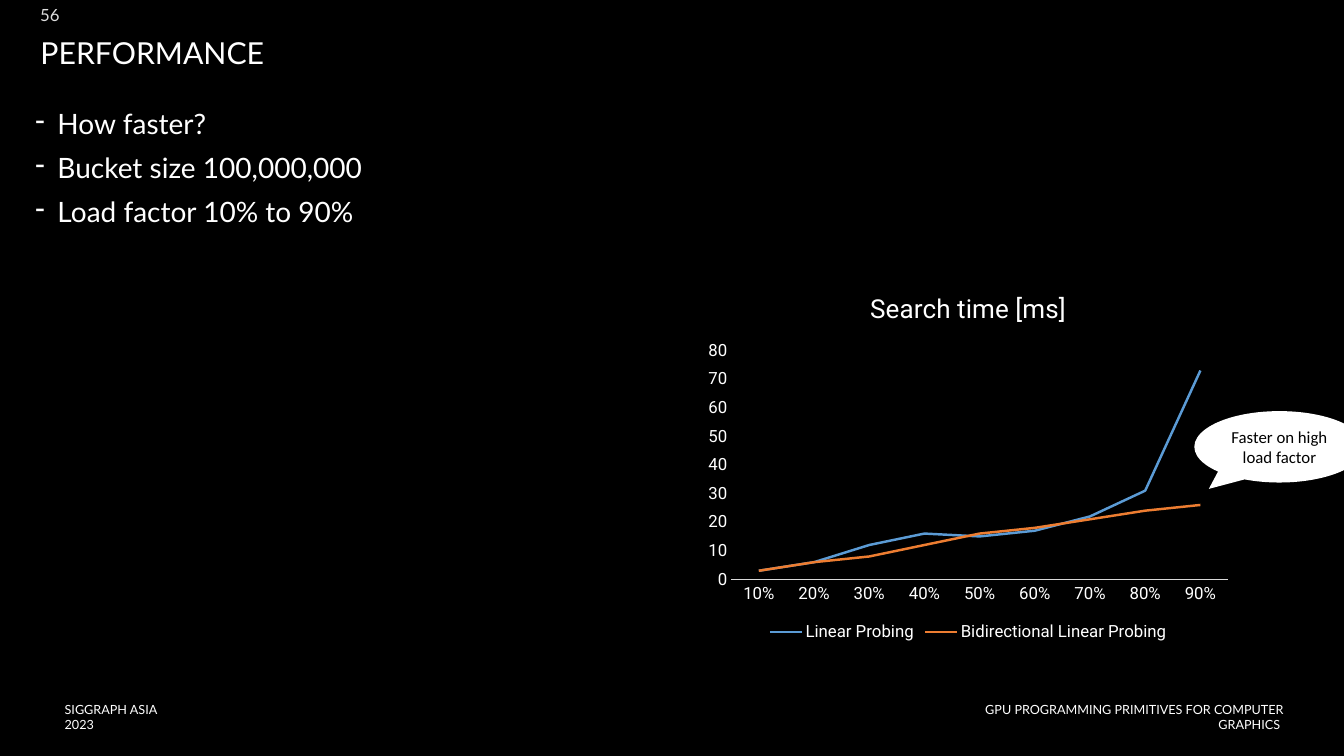
from lxml import etree
from pptx import Presentation
from pptx.chart import data
from pptx.dml import color
from pptx.enum import chart as charts, shapes, text
from pptx.oxml import ns, parse_xml
from pptx.util import Cm, Pt

BLANK_LAYOUT = 6
WHITE, BLACK = "FFFFFF", "000000"
SEARCH_TIMES = {
    "Linear Probing": ("5B9BD5", (3, 6, 12, 16, 15, 17, 22, 31, 73)),
    "Bidirectional Linear Probing": ("ED7D31", (3, 6, 8, 12, 16, 18, 21, 24, 26)),
}


def rgb(value):
    return color.RGBColor.from_string(value)


def paint(fill, value):
    fill.solid()
    fill.fore_color.rgb = rgb(value)


def style_font(font, size, value=WHITE, name="Lato"):
    font.name = name
    font.size = Pt(size)
    font.color.rgb = rgb(value)


def set_text(shape, words, size, value=WHITE, name="Lato", inset=0.13,
             align=text.PP_ALIGN.LEFT, anchor=text.MSO_ANCHOR.MIDDLE):
    frame = shape.text_frame
    frame.word_wrap = True
    frame.vertical_anchor = anchor
    frame.margin_left = frame.margin_right = Cm(inset)
    frame.margin_top = frame.margin_bottom = Cm(inset)
    frame.text = words
    for para in frame.paragraphs:
        para.alignment = align
        for span in para.runs:
            style_font(span.font, size, value, name)
    return frame


def add_text(page, bounds, words, size, **options):
    box = page.shapes.add_textbox(*map(Cm, bounds))
    return set_text(box, words, size, **options)


def add_bullets(page, bounds, lines):
    frame = add_text(page, bounds, "\n".join(lines), 20, anchor=text.MSO_ANCHOR.TOP)
    for index, para in enumerate(frame.paragraphs):
        properties = para._p.get_or_add_pPr()
        properties.set("marL", str(Cm(0.56)))
        properties.set("indent", str(-Cm(0.56)))
        etree.SubElement(properties, ns.qn("a:buChar"), char="-")
        para.line_spacing = 0.9
        if index:
            para.space_before = Pt(10)


def area_fill(value):
    return parse_xml(
        f'<c:spPr {ns.nsdecls("c", "a")}><a:solidFill><a:srgbClr val="{value}"/>'
        "</a:solidFill><a:ln><a:noFill/></a:ln></c:spPr>")


def style_axis(axis, number_format):
    axis.has_major_gridlines = False
    axis.major_tick_mark = axis.minor_tick_mark = charts.XL_TICK_MARK.NONE
    axis.tick_labels.number_format = number_format
    axis.tick_labels.number_format_is_linked = False
    style_font(axis.tick_labels.font, 12, name="Roboto")


def add_search_chart(page, bounds):
    table = data.CategoryChartData()
    table.categories = [step / 10 for step in range(1, 10)]
    table.categories.number_format = "0%"
    for name, (_, values) in SEARCH_TIMES.items():
        table.add_series(name, values)
    chart = page.shapes.add_chart(
        charts.XL_CHART_TYPE.LINE, *map(Cm, bounds), table).chart
    style_font(chart.font, 10, name="Roboto")

    chart.has_title = True
    title = chart.chart_title.text_frame
    title.text = "Search time [ms]"
    style_font(title.paragraphs[0].runs[0].font, 18.6, name="Roboto")
    title.paragraphs[0].runs[0].font.bold = False
    chart.chart_title.include_in_layout = False

    chart.has_legend = True
    chart.legend.position = charts.XL_LEGEND_POSITION.BOTTOM
    chart.legend.include_in_layout = False
    style_font(chart.legend.font, 12, name="Roboto")

    style_axis(chart.category_axis, "0%")
    chart.category_axis.format.line.color.rgb = rgb("D9D9D9")
    chart.category_axis.format.line.width = Pt(0.75)
    style_axis(chart.value_axis, "General")
    chart.value_axis.format.line.fill.background()
    chart.value_axis.minimum_scale = 0
    chart.value_axis.maximum_scale = 80
    chart.value_axis.major_unit = 10

    plot = chart.plots[0]
    plot.vary_by_categories = False
    for series, (shade, _) in zip(plot.series, SEARCH_TIMES.values()):
        series.smooth = False
        series.marker.style = charts.XL_MARKER_STYLE.NONE
        series.format.line.color.rgb = rgb(shade)
        series.format.line.width = Pt(1.75)

    space = chart._chartSpace
    space.find(ns.qn("c:txPr")).addprevious(area_fill(BLACK))
    space.chart.plotArea.append(area_fill(BLACK))


def add_callout(page, bounds, words):
    callout = page.shapes.add_shape(
        shapes.MSO_SHAPE.OVAL_CALLOUT, *map(Cm, bounds))
    callout.adjustments[0] = -0.415
    callout.adjustments[1] = 0.589
    callout.shadow.inherit = False
    paint(callout.fill, WHITE)
    callout.line.fill.background()
    set_text(callout, words, 12, BLACK, "Calibri", align=text.PP_ALIGN.CENTER)


def main():
    deck = Presentation()
    deck.slide_width, deck.slide_height = Cm(33.87), Cm(19.05)
    page = deck.slides.add_slide(deck.slide_layouts[BLANK_LAYOUT])
    paint(page.background.fill, BLACK)

    add_text(page, (1.63, 17.88, 2.74, 0.38), "SIGGRAPH ASIA 2023", 9, inset=0)
    add_text(page, (24.31, 17.88, 8.03, 0.38),
             "GPU PROGRAMMING PRIMITIVES FOR COMPUTER GRAPHICS ", 9,
             inset=0, align=text.PP_ALIGN.RIGHT)
    add_text(page, (0.99, 0.13, 0.51, 0.51), "56", 12, value="DDDDDD", inset=0,
             align=text.PP_ALIGN.RIGHT)
    title = add_text(page, (0.89, 0.84, 32.26, 1.07), "PERFORMANCE", 21.6)
    title.paragraphs[0].line_spacing = 0.9
    add_bullets(page, (0.76, 2.64, 32.31, 13.61), (
        "How faster?", "Bucket size 100,000,000", "Load factor 10% to 90%"))
    add_search_chart(page, (17.58, 6.91, 13.64, 9.37))
    add_callout(page, (30.1, 10.36, 4.29, 1.8), "Faster on high load factor")
    deck.save("out.pptx")


if __name__ == "__main__":
    main()
